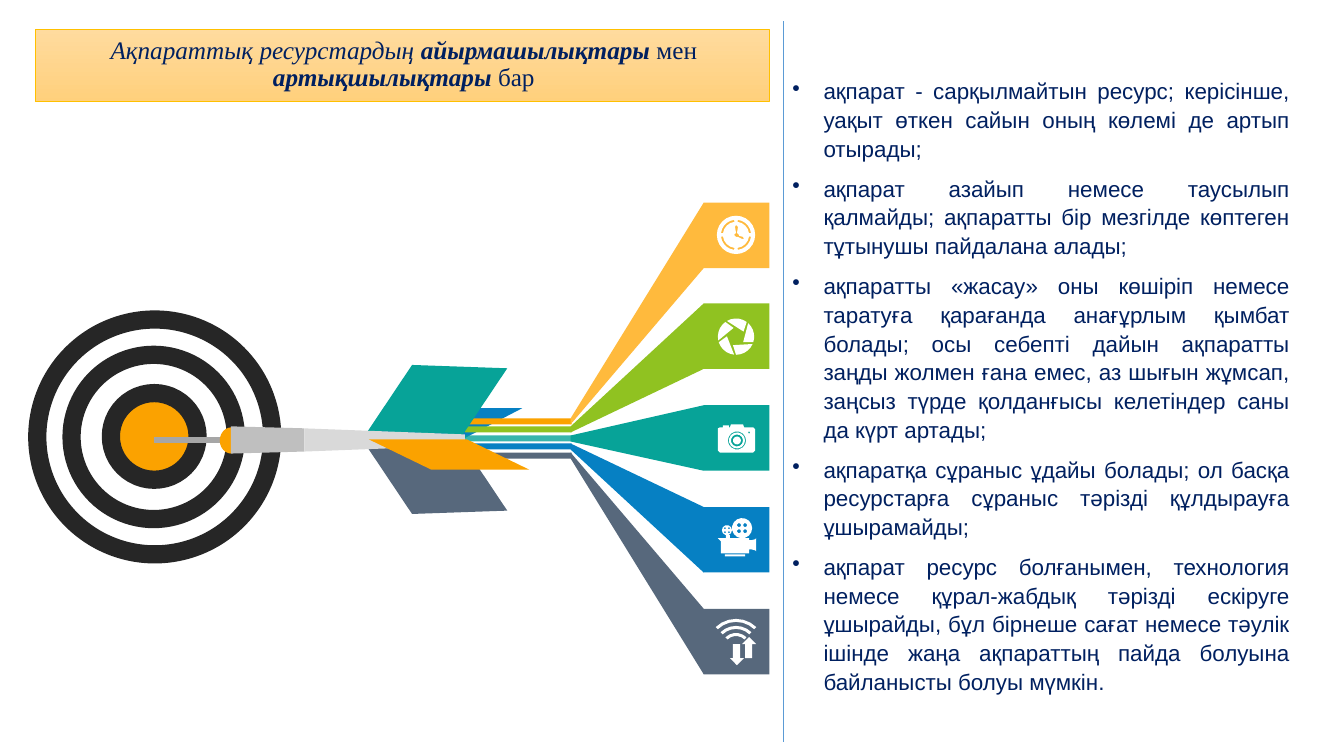
import math
from dataclasses import dataclass

from lxml import etree
from pptx import Presentation, util as u
from pptx.dml.color import RGBColor
from pptx.enum import shapes as kinds, text
from pptx.oxml import ns

PX = 9144  # EMU: 100 px to the inch

COLORS = {
    "white": "FFFFFF", "ring": "262626", "orange": "FBA200", "amber": "FFBA3D",
    "green": "90C221", "teal": "07A398", "blue": "0680C3", "slate": "57687C",
    "needle": "A6A6A6", "shaft": "D9D9D9", "barrel": "BFBFBF", "navy": "002060",
    "divider": "5B9BD5", "banner_top": "FFDB9E", "banner_bottom": "FFD07C",
    "banner_edge": "FFC000",
}

Point = tuple[float, float]
Contour = list[Point]
Box = tuple[int, int, int, int]


def px(length: float) -> u.Emu:
    return u.Emu(round(length * PX))


def rgb(name: str) -> RGBColor:
    return RGBColor.from_string(COLORS[name])


def arc(center: Point, radius: int, start: float, end: float) -> Contour:
    """Points along an arc, in clockwise degrees from the right; small arcs get fewer."""
    steps = math.ceil(abs(end - start) / 360 * min(24, 5 + radius))
    angles = [math.radians(start + (end - start) * i / steps) for i in range(steps + 1)]
    return [(center[0] + radius * math.cos(a), center[1] + radius * math.sin(a)) for a in angles]


def circle(x: int, y: int, radius: int) -> Contour:
    return arc((x, y), radius, 0, 360)[:-1]


def band(center: Point, outer: int, inner: int, start: int, end: int) -> Contour:
    return arc(center, outer, start, end) + arc(center, inner, end, start)


def rect(left: int, top: int, right: int, bottom: int) -> Contour:
    return [(left, top), (right, top), (right, bottom), (left, bottom)]


def clock() -> list[Contour]:
    center = (730, 233)
    hands = [(730, 223), (729, 225), (730, 231), (728, 233), (730, 235), (732, 235), (736, 237),
             (738, 237), (737, 235), (733, 234), (733, 233), (731, 231), (732, 225)]
    dial = [band(center, 15, 13, start + 7, start + 83) for start in range(0, 360, 90)]
    return [circle(*center, 19), *dial, hands]


def aperture() -> list[Contour]:
    center = (730, 334)
    return [arc(center, 18, start, start + 66) + arc(center, 9, start + 86, start + 87)[:1]
            for start in range(24, 384, 72)]


def photo_camera() -> list[Contour]:
    body = [(712, 425), (714, 424), (717, 424), (717, 422), (723, 422), (723, 424), (724, 424),
            (725, 421), (737, 421), (738, 424), (747, 424), (749, 426), (749, 447), (747, 449),
            (714, 449), (712, 447)]
    return [body, *(circle(731, 437, radius) for radius in (9, 8, 6, 4)), circle(743, 429, 1)]


def reel(x: int, y: int, radius: int, offset: int, hole: int) -> list[Contour]:
    """A film reel with four holes."""
    holes = [circle(x + dx, y + dy, hole) for dx in (-offset, offset) for dy in (-offset, offset)]
    return [circle(x, y, radius), *holes]


def film_camera() -> list[Contour]:
    body = [(712, 534), (743, 534), (743, 536), (745, 536), (749, 535), (750, 534), (750, 547),
            (749, 546), (745, 545), (743, 545), (743, 549), (715, 549), (715, 537)]
    return [body, rect(720, 531, 724, 534), rect(719, 550, 739, 552),
            *reel(736, 524, 10, 3, 2), *reel(721, 526, 5, 2, 1)]


def wireless() -> list[Contour]:
    down = [(727, 639), (734, 639), (734, 653), (738, 653), (731, 660), (724, 653), (727, 653)]
    up = [(743, 632), (750, 639), (746, 639), (746, 653), (739, 653), (739, 639), (736, 639)]
    waves = [band((730, 643), radius, radius - 3, 226, 314) for radius in (29, 22, 15)]
    return [down, up, *waves]


@dataclass
class Channel:
    color: str
    icon: list[Contour]
    bar_alpha: int = 100


@dataclass
class Preset:
    kind: kinds.MSO_SHAPE
    box: Box
    color: str
    adjust: tuple[float, ...] = ()
    rotation: int = 0
    flip: bool = False


CHANNELS = [Channel("amber", clock()), Channel("green", aperture()),
            Channel("teal", photo_camera(), 80), Channel("blue", film_camera()),
            Channel("slate", wireless())]

FIN = kinds.MSO_SHAPE.PARALLELOGRAM
BACK_FIN = Preset(FIN, (365, 405, 153, 30), "blue", (1.92,))
SIDE_FINS = [Preset(FIN, (366, 442, 136, 67), "slate", (0.62,), 358, True),
             Preset(FIN, (366, 363, 136, 67), "teal", (0.62,), 2)]
COLLAR = Preset(kinds.MSO_SHAPE.CHORD, (218, 424, 23, 26), "orange", (54, 162))
FRONT_FIN = Preset(FIN, (366, 436, 159, 30), "orange", (2.06,), 0, True)

RINGS = [(37, 317, 233, "white"), (71, 352, 163, "white"), (110, 390, 86, "orange")]

TITLE = [("Ақпараттық ресурстардың ", False, True), ("айырмашылықтары", True, True),
         (" мен ", False, False), ("артықшылықтары ", True, True), ("бар", False, False)]
ADVANTAGES = [
    "ақпарат - сарқылмайтын ресурс; керісінше, уақыт өткен сайын оның көлемі де артып отырады;",
    "ақпарат азайып немесе таусылып қалмайды; ақпаратты бір мезгілде көптеген тұтынушы "
    "пайдалана алады;",
    "ақпаратты «жасау» оны көшіріп немесе таратуға қарағанда анағұрлым қымбат болады; осы "
    "себепті дайын ақпаратты заңды жолмен ғана емес, аз шығын жұмсап, заңсыз түрде қолданғысы "
    "келетіндер саны да күрт артады;",
    "ақпаратқа сұраныс ұдайы болады; ол басқа ресурстарға сұраныс тәрізді құлдырауға ұшырамайды;",
    "ақпарат ресурс болғанымен, технология немесе құрал-жабдық тәрізді ескіруге ұшырайды, бұл "
    "бірнеше сағат немесе тәулік ішінде жаңа ақпараттың пайда болуына байланысты болуы мүмкін.",
]


def paint(shape, color: str) -> None:
    shape.shadow.inherit = False
    shape.fill.solid()
    shape.fill.fore_color.rgb = rgb(color)
    shape.line.fill.background()


def draw_preset(slide, part: Preset):
    shape = slide.shapes.add_shape(part.kind, *map(px, part.box))
    paint(shape, part.color)
    for i, value in enumerate(part.adjust):
        shape.adjustments[i] = value
    shape.rotation = part.rotation
    if part.flip:
        shape._element.spPr.xfrm.set("flipH", "1")
    return shape


def draw_outline(slide, contours: list[Contour], color: str) -> None:
    first, *others = [[(px(x), px(y)) for x, y in contour] for contour in contours]
    builder = slide.shapes.build_freeform(*first[0], scale=1.0)
    builder.add_line_segments(first[1:], close=True)
    for contour in others:
        builder.move_to(*contour[0])
        builder.add_line_segments(contour[1:], close=True)
    paint(builder.convert_to_shape(), color)


def draw_target(slide) -> None:
    for left, top, size, color in RINGS:
        ring = draw_preset(slide, Preset(kinds.MSO_SHAPE.OVAL, (left, top, size, size), color))
        ring.line.color.rgb = rgb("ring")
        ring.line.width = u.Pt(13)


def draw_channel(slide, index: int, channel: Channel) -> None:
    """A bar that widens into a square with an icon."""
    square_top, bar_top = 201 + index * 403 // 4, 415 + index * 17 // 2
    tile = kinds.MSO_SHAPE.RECTANGLE
    draw_preset(slide, Preset(tile, (698, square_top, 65, 65), channel.color))
    bar_color = "orange" if channel.color == "amber" else channel.color
    bar = draw_preset(slide, Preset(tile, (461, bar_top, 106, 6), bar_color))
    if channel.bar_alpha < 100:
        fill = bar._element.spPr.find(ns.qn("a:solidFill"))
        etree.SubElement(fill[0], ns.qn("a:alpha"), val=str(channel.bar_alpha * 1000))
    ribbon = [(566, bar_top), (698, square_top), (698, square_top + 65), (566, bar_top + 6)]
    draw_outline(slide, [ribbon], channel.color)
    draw_outline(slide, channel.icon, "white")


def draw_dart(slide) -> None:
    draw_outline(slide, [rect(153, 434, 233, 439)], "needle")
    for fin in SIDE_FINS:
        draw_preset(slide, fin)
    draw_outline(slide, [[(302, 425), (461, 431), (461, 442), (302, 448)]], "shaft")
    draw_preset(slide, COLLAR)
    draw_outline(slide, [[(229, 423), (302, 425), (302, 448), (229, 450)]], "barrel")
    draw_preset(slide, FRONT_FIN)


def set_font(font, family: str, size: int) -> None:
    font.name, font.size = family, u.Pt(size)
    font.color.rgb = rgb("navy")


def draw_advantages(slide) -> None:
    frame = slide.shapes.add_textbox(*map(px, (776, 70, 513, 629))).text_frame
    frame.word_wrap = True
    frame.auto_size = text.MSO_AUTO_SIZE.SHAPE_TO_FIT_TEXT
    for i, advantage in enumerate(ADVANTAGES):
        paragraph = frame.add_paragraph() if i else frame.paragraphs[0]
        paragraph.text = advantage
        paragraph.alignment = text.PP_ALIGN.JUSTIFY
        paragraph.line_spacing, paragraph.space_after = 1.07, u.Pt(8)
        set_font(paragraph.font, "Arial", 16)
        properties = paragraph._p.get_or_add_pPr()
        properties.set("marL", str(px(31)))
        properties.set("indent", str(px(-31)))
        bullet = etree.Element(ns.qn("a:buChar"), char="•")
        properties.find(ns.qn("a:defRPr")).addprevious(bullet)


def draw_divider(slide) -> None:
    divider = slide.shapes.add_connector(kinds.MSO_CONNECTOR.STRAIGHT,
                                         *map(px, (777, 21, 777, 736)))
    divider.line.color.rgb = rgb("divider")
    divider.line.width = u.Pt(0.5)
    etree.SubElement(divider._element.spPr, ns.qn("a:effectLst"))


def draw_title(slide) -> None:
    banner = draw_preset(slide, Preset(kinds.MSO_SHAPE.RECTANGLE, (35, 29, 728, 72), "banner_top"))
    banner.fill.gradient()
    banner.fill.gradient_angle = 270
    for stop, color in zip(banner.fill.gradient_stops, ("banner_top", "banner_bottom")):
        stop.color.rgb = rgb(color)
    banner.line.color.rgb = rgb("banner_edge")
    banner.line.width = u.Pt(0.5)
    frame = slide.shapes.add_textbox(*map(px, (92, 41, 617, 46))).text_frame
    frame.word_wrap = True
    frame.vertical_anchor = text.MSO_ANCHOR.MIDDLE
    heading = frame.paragraphs[0]
    heading.alignment = text.PP_ALIGN.CENTER
    heading.line_spacing, heading.space_before = 0.9, u.Pt(10)
    set_font(heading.font, "Times New Roman", 18)
    for words, bold, italic in TITLE:
        run = heading.add_run()
        run.text, run.font.bold, run.font.italic = words, bold, italic


def main() -> None:
    deck = Presentation()
    deck.slide_width, deck.slide_height = px(1333), px(750)
    slide = deck.slides.add_slide(deck.slide_layouts[6])
    draw_target(slide)
    draw_preset(slide, BACK_FIN)
    for index, channel in enumerate(CHANNELS):
        draw_channel(slide, index, channel)
    draw_dart(slide)
    draw_advantages(slide)
    draw_divider(slide)
    draw_title(slide)
    deck.save("out.pptx")


if __name__ == "__main__":
    main()
